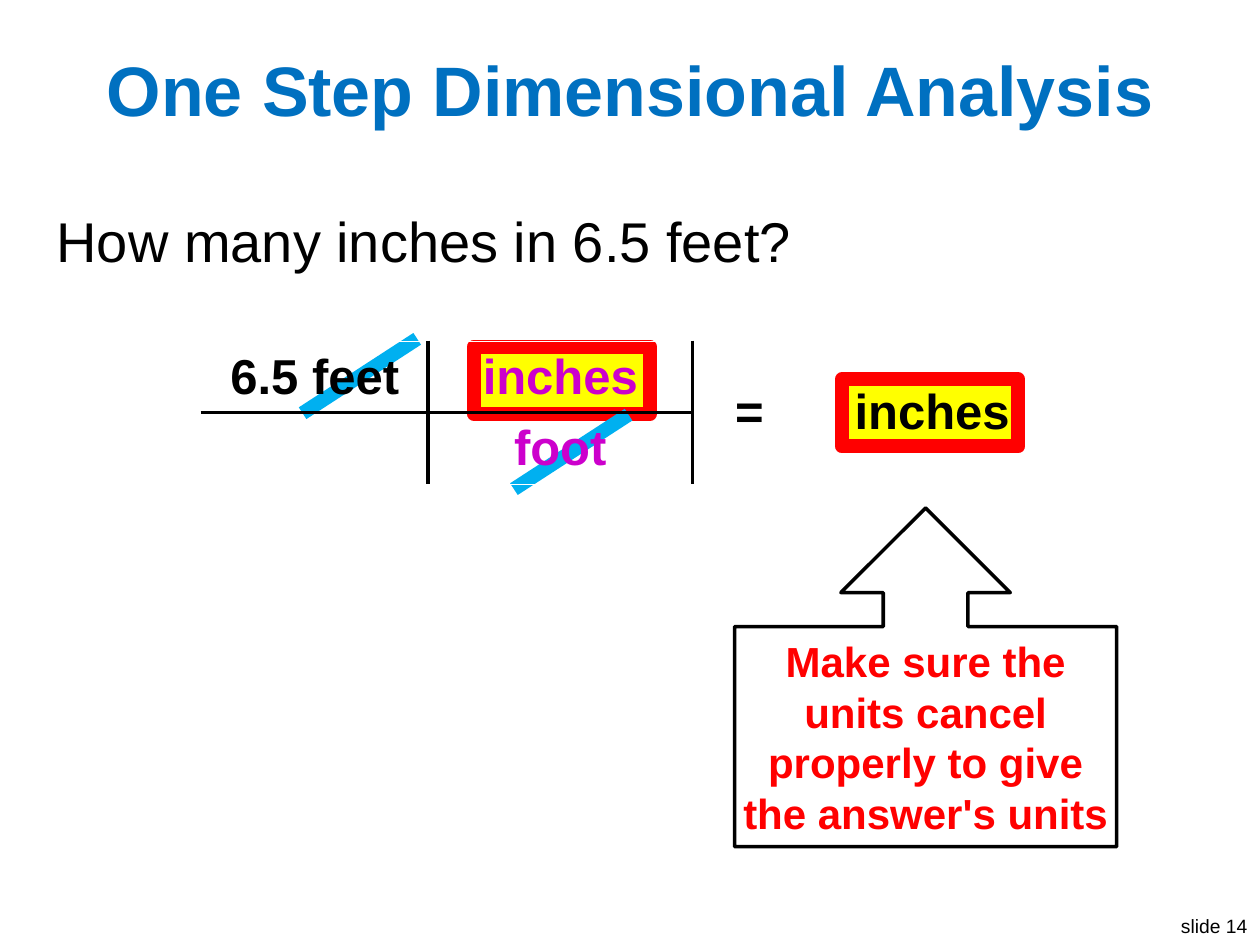
from lxml import etree
from pptx import Presentation
from pptx.dml.color import RGBColor
from pptx.enum.shapes import MSO_CONNECTOR, MSO_SHAPE
from pptx.enum.text import MSO_ANCHOR, PP_ALIGN
from pptx.oxml.ns import qn
from pptx.util import Cm, Pt

LEFT, CENTER, RIGHT = PP_ALIGN.LEFT, PP_ALIGN.CENTER, PP_ALIGN.RIGHT
MIDDLE = MSO_ANCHOR.MIDDLE
RECT, CALLOUT = MSO_SHAPE.RECTANGLE, MSO_SHAPE.UP_ARROW_CALLOUT
STRAIGHT = MSO_CONNECTOR.STRAIGHT
COLORS = {"title": "0070C0", "text": "000000", "paper": "FFFFFF",
          "unit": "CC00CC", "box": "FFFF00", "alert": "FF0000",
          "strike": "00B0F0"}


def rgb(name):
    return RGBColor.from_string(COLORS[name])


def write(tf, text, size, color, align=LEFT, bold=False):
    p = tf.paragraphs[0]
    p.alignment = align
    r = p.add_run()
    r.text = text
    r.font.name = "Arial"
    r.font.size = Pt(size)
    r.font.bold = bold
    r.font.color.rgb = rgb(color)


prs = Presentation()
prs.slide_width, prs.slide_height = Cm(25.4), Cm(19.05)
s = prs.slides.add_slide(prs.slide_layouts[5])

# Title
title = s.shapes.title
title.left, title.top, title.width, title.height = Cm(0.51), Cm(0.76), Cm(24.38), Cm(2.03)
title.text_frame.vertical_anchor = MIDDLE
write(title.text_frame, "One Step Dimensional Analysis", 40, "title", CENTER, True)

# Slide number and question
for x, y, w, h, text, size, align, wrap in (
        (23.5, 18.31, 1.9, 0.74, "slide 14", 11, RIGHT, False),
        (0.89, 4.04, 23.62, 1.63, "How many inches in 6.5 feet?", 32, LEFT, True)):
    tf = s.shapes.add_textbox(Cm(x), Cm(y), Cm(w), Cm(h)).text_frame
    tf.word_wrap = wrap
    write(tf, text, size, "text", align)

# Boxes behind the matching units
for x, y in ((16.97, 7.65), (9.55, 6.99)):
    sp = s.shapes.add_shape(RECT, Cm(x), Cm(y), Cm(3.56), Cm(1.35))
    sp.shadow.inherit = False
    sp.fill.solid()
    sp.fill.fore_color.rgb = rgb("box")
    sp.line.color.rgb = rgb("alert")
    sp.line.width = Pt(8)

# Callout under the answer
sp = s.shapes.add_shape(CALLOUT, Cm(14.81), Cm(10.24), Cm(7.7), Cm(6.83))
sp.shadow.inherit = False
sp.fill.background()
sp.line.color.rgb = rgb("text")
sp.line.width = Pt(2)
tf = sp.text_frame
tf.word_wrap = True
tf.vertical_anchor = MIDDLE
tf.margin_left = tf.margin_right = tf.margin_top = tf.margin_bottom = Cm(0.05)
write(tf, "Make sure the units cancel properly to give the answer's units",
      24, "alert", CENTER, True)

# Strikes through the cancelled units
for x, y in ((6.1, 8.33), (10.36, 9.86)):
    strike = s.shapes.add_connector(STRAIGHT, Cm(x), Cm(y), Cm(x + 2.31), Cm(y - 1.5))
    strike.line.color.rgb = rgb("strike")
    strike.line.width = Pt(8)
    etree.SubElement(strike._element.spPr, qn("a:effectLst"))

# Conversion table
tbl = s.shapes.add_table(2, 4, Cm(4.06), Cm(6.88), Cm(17.27), Cm(2.88)).table
tbl.first_row = tbl.horz_banding = False
for col, w in zip(tbl.columns, (4.57, 5.33, 2.29, 5.08)):
    col.width = Cm(w)
for row in tbl.rows:
    row.height = Cm(1.44)
for c in (2, 3):
    tbl.cell(0, c).merge(tbl.cell(1, c))
for r, c, text, color in ((0, 0, "6.5 feet", "text"), (0, 1, "inches", "unit"),
                          (0, 2, "=", "text"), (0, 3, "inches", "text"),
                          (1, 1, "foot", "unit")):
    write(tbl.cell(r, c).text_frame, text, 28, color, CENTER, True)

# Black rules inside the fraction grid, white borders elsewhere
for r in range(2):
    for c in range(4):
        cell = tbl.cell(r, c)
        cell.vertical_anchor = MIDDLE
        cell.fill.background()
        ruled = {"L": c in (1, 2), "R": c in (0, 1),
                 "T": r == 1 and c < 2, "B": r == 0 and c < 2}
        for i, (side, black) in enumerate(ruled.items()):
            ln = etree.Element(qn("a:ln" + side), w=str(Pt(2.25 if black else 1)))
            fill = etree.SubElement(ln, qn("a:solidFill"))
            etree.SubElement(fill, qn("a:srgbClr"), val=COLORS["text" if black else "paper"])
            cell._tc.tcPr.insert(i, ln)

prs.save("out.pptx")
